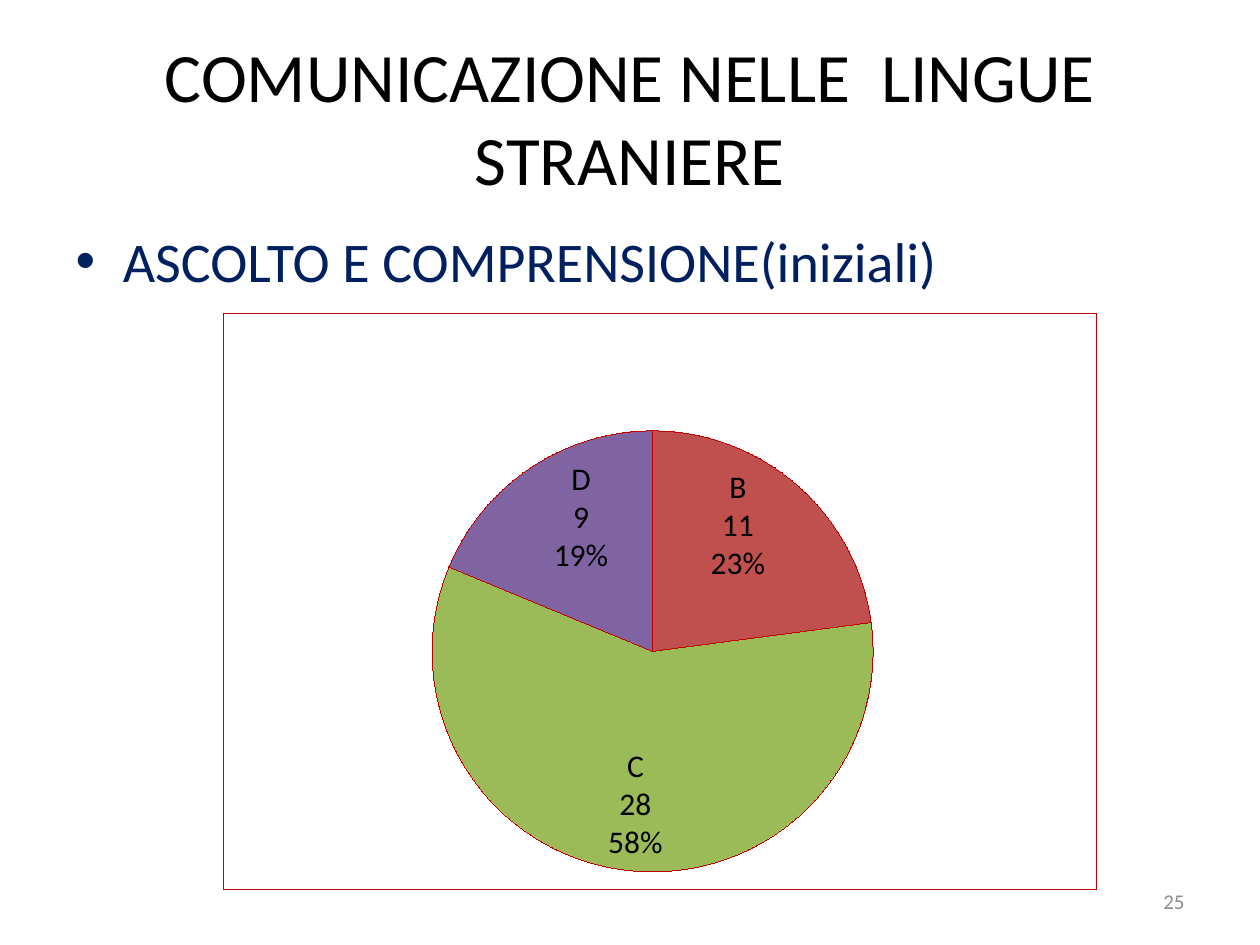
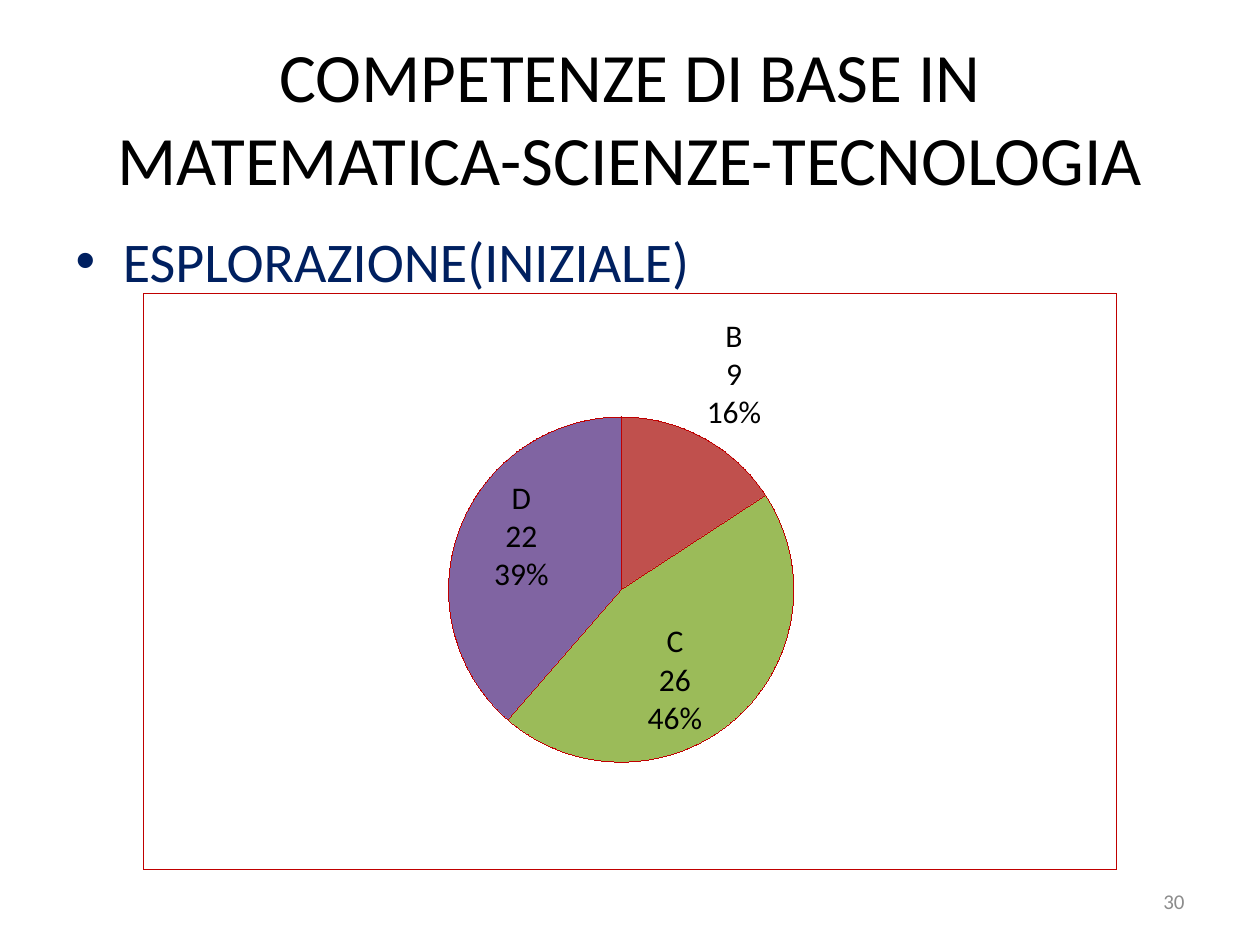
from dataclasses import dataclass

import pptx
import pptx.chart.data
import pptx.dml.color
import pptx.enum.chart
import pptx.enum.text
import pptx.oxml
import pptx.oxml.ns
import pptx.util

SCALE = pptx.util.Inches(1) // 100


@dataclass(frozen=True)
class Theme:
    font: str = "Calibri"
    title_color: str = "000000"
    body_color: str = "002060"
    number_color: str = "8C8C8C"
    label_color: str = "000000"
    line_color: str = "C00000"
    slice_colors: tuple[str, ...] = ("4F81BD", "C0504D", "9BBB59", "8064A2")
    title_size: float = 39.6
    body_size: float = 32
    label_size: float = 18
    number_size: float = 12


@dataclass(frozen=True)
class Box:
    x: int
    y: int
    w: int
    h: int

    def emu(self) -> tuple[int, ...]:
        return tuple(v * SCALE for v in (self.x, self.y, self.w, self.h))


@dataclass(frozen=True)
class PieSlide:
    title: str
    topic: str
    number: int
    counts: tuple[int, ...]
    frame: Box
    pie: Box


THEME = Theme()
GRADES = ("A", "B", "C", "D")
TITLE_BOX = Box(50, 30, 900, 125)
BODY_BOX = Box(50, 175, 900, 495)
NUMBER_BOX = Box(717, 695, 233, 40)

SLIDES = (
    PieSlide("COMUNICAZIONE NELLE  LINGUE STRANIERE",
             "ASCOLTO E COMPRENSIONE(iniziali)", 25, (0, 11, 28, 9),
             Box(177, 249, 693, 457), Box(343, 342, 350, 350)),
    PieSlide("COMPETENZE DI BASE IN MATEMATICA-SCIENZE-TECNOLOGIA",
             "ESPLORAZIONE(INIZIALE)", 30, (0, 9, 26, 22),
             Box(114, 233, 772, 457), Box(356, 331, 274, 274)),
)


def rgb(color: str) -> pptx.dml.color.RGBColor:
    return pptx.dml.color.RGBColor.from_string(color)


def style_font(font, size: float, color: str) -> None:
    font.name = THEME.font
    font.size = pptx.util.Pt(size)
    font.color.rgb = rgb(color)


def place(sp, box: Box) -> None:
    sp.left, sp.top, sp.width, sp.height = box.emu()


def write(sp, text: str, size: float, color: str):
    tf = sp.text_frame
    tf.word_wrap = True
    tf.auto_size = pptx.enum.text.MSO_AUTO_SIZE.NONE
    p = tf.paragraphs[0]
    r = p.add_run()
    r.text = text
    style_font(r.font, size, color)
    return p


def c_xml(body: str):
    return pptx.oxml.parse_xml(body.replace(
        ">", f" {pptx.oxml.ns.nsdecls('c', 'a')}>", 1))


def set_border(chart) -> None:
    chart._chartSpace.xpath("c:chart")[0].addnext(c_xml(
        '<c:spPr><a:noFill/><a:ln><a:solidFill>'
        f'<a:srgbClr val="{THEME.line_color}"/></a:solidFill></a:ln></c:spPr>'))


def set_plot_area(chart, frame: Box, pie: Box) -> None:
    area = chart._chartSpace.xpath("c:chart/c:plotArea")[0]
    for old in area.xpath("c:layout"):
        area.remove(old)
    spans = {"x": (pie.x - frame.x) / frame.w, "y": (pie.y - frame.y) / frame.h,
             "w": pie.w / frame.w, "h": pie.h / frame.h}
    values = "".join(f'<c:{k} val="{v:.4f}"/>' for k, v in spans.items())
    area.insert(0, c_xml(
        '<c:layout><c:manualLayout><c:layoutTarget val="inner"/>'
        '<c:xMode val="edge"/><c:yMode val="edge"/>'
        f'{values}</c:manualLayout></c:layout>'))


def set_labels(series, counts: tuple[int, ...]) -> None:
    labels = series.data_labels
    labels.show_value = True
    labels.show_category_name = True
    labels.show_percentage = True
    labels.position = pptx.enum.chart.XL_LABEL_POSITION.BEST_FIT
    style_font(labels.font, THEME.label_size, THEME.label_color)
    group = series._element.xpath("c:dLbls")[0]
    group.xpath("c:showBubbleSize")[0].addnext(
        c_xml("<c:separator>\n</c:separator>"))
    empty = [i for i, count in enumerate(counts) if count == 0]
    for i in reversed(empty):
        group.insert(0, c_xml(
            f'<c:dLbl><c:idx val="{i}"/><c:delete val="1"/></c:dLbl>'))


def add_pie(s, item: PieSlide) -> None:
    data = pptx.chart.data.CategoryChartData()
    data.categories = GRADES
    data.add_series("Series 1", item.counts)
    chart = s.shapes.add_chart(
        pptx.enum.chart.XL_CHART_TYPE.PIE, *item.frame.emu(), data).chart
    chart.has_title = False
    chart.has_legend = False
    style_font(chart.font, THEME.label_size, THEME.label_color)
    plot = chart.plots[0]
    plot.vary_by_categories = True
    series = plot.series[0]
    for i, color in enumerate(THEME.slice_colors):
        fmt = series.points[i].format
        fmt.fill.solid()
        fmt.fill.fore_color.rgb = rgb(color)
        fmt.line.color.rgb = rgb(THEME.line_color)
    set_labels(series, item.counts)
    set_plot_area(chart, item.frame, item.pie)
    set_border(chart)


def add_slide(prs, item: PieSlide) -> None:
    s = prs.slides.add_slide(prs.slide_layouts[1])
    title, body = s.shapes.title, s.placeholders[1]
    place(title, TITLE_BOX)
    p = write(title, item.title, THEME.title_size, THEME.title_color)
    p.alignment = pptx.enum.text.PP_ALIGN.CENTER
    place(body, BODY_BOX)
    write(body, item.topic, THEME.body_size, THEME.body_color)
    number = s.shapes.add_textbox(*NUMBER_BOX.emu())
    p = write(number, str(item.number), THEME.number_size, THEME.number_color)
    p.alignment = pptx.enum.text.PP_ALIGN.RIGHT
    number.text_frame.vertical_anchor = pptx.enum.text.MSO_ANCHOR.MIDDLE
    add_pie(s, item)


def main() -> None:
    prs = pptx.Presentation()
    prs.slide_width, prs.slide_height = 1000 * SCALE, 750 * SCALE
    for item in SLIDES:
        add_slide(prs, item)
    prs.save("out.pptx")


if __name__ == "__main__":
    main()
